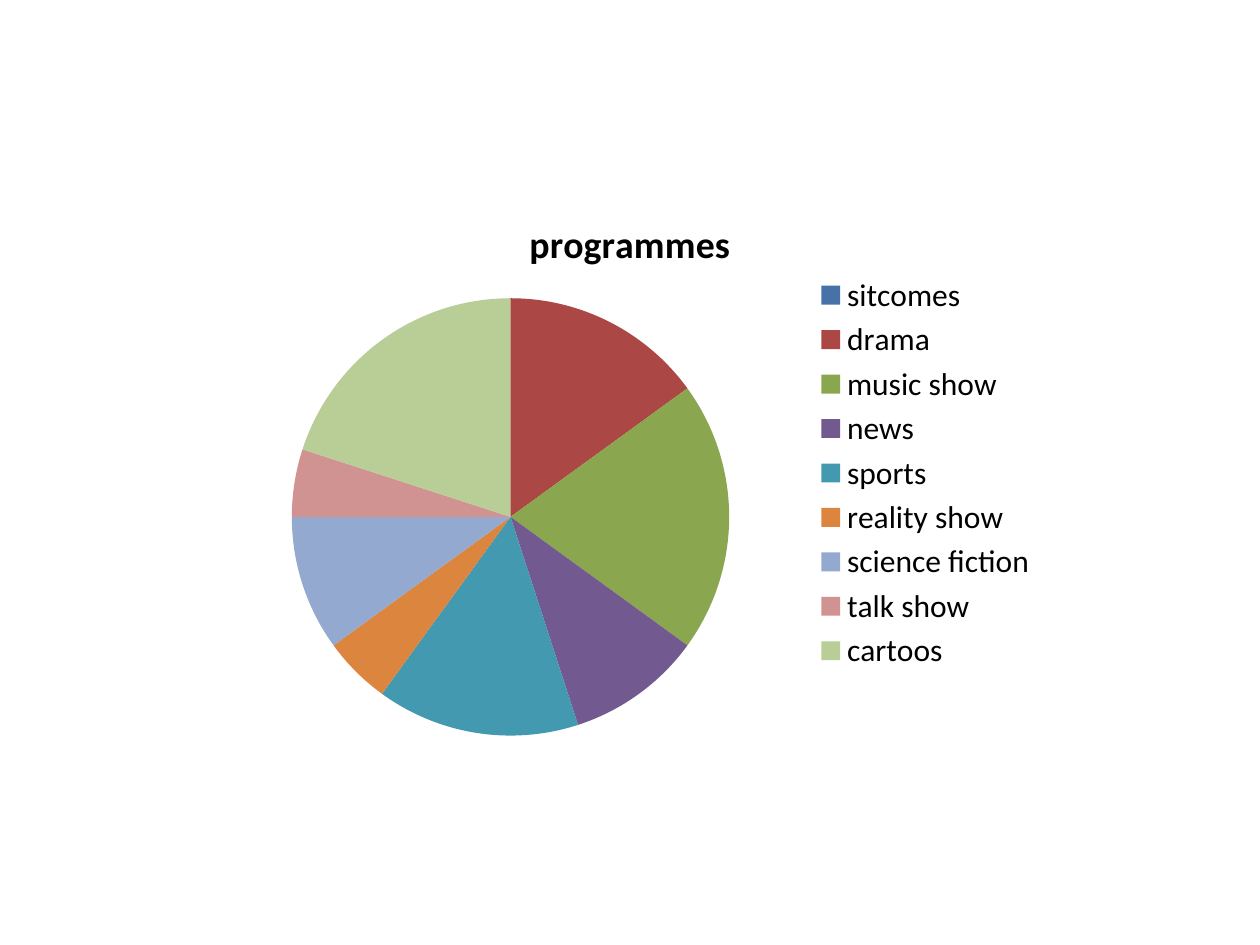
from dataclasses import dataclass

from pptx import Presentation
from pptx.chart.data import CategoryChartData
from pptx.dml.color import RGBColor
from pptx.enum.chart import XL_CHART_TYPE as ChartType, XL_LEGEND_POSITION as LegendPosition
from pptx.util import Cm, Pt

TITLE = "programmes"
PROGRAMMES = [  # category, share, slice colour
    ("sitcomes", 0, "4672A8"),
    ("drama", 15, "AB4744"),
    ("music show", 20, "8AA64F"),
    ("news", 10, "725990"),
    ("sports", 15, "4299B0"),
    ("reality show", 5, "DC853E"),
    ("science fiction", 10, "93A9CF"),
    ("talk show", 5, "D19392"),
    ("cartoos", 20, "B9CD96"),
]


@dataclass(frozen=True)
class Theme:
    font: str = "Calibri"
    text: str = "000000"
    title_size: float = 21.6
    legend_size: float = 18


THEME = Theme()


def style_font(font, size, bold=False):
    font.name = THEME.font
    font.size = Pt(size)
    font.bold = bold
    font.color.rgb = RGBColor.from_string(THEME.text)


def add_programme_chart(slide, left, top, width, height):
    names, shares, colours = zip(*PROGRAMMES)
    data = CategoryChartData()
    data.categories = names
    data.add_series(TITLE, shares)
    chart = slide.shapes.add_chart(ChartType.PIE, left, top, width, height, data).chart
    style_font(chart.font, THEME.legend_size)

    chart.has_title = True
    title_frame = chart.chart_title.text_frame
    title_frame.text = TITLE
    style_font(title_frame.paragraphs[0].runs[0].font, THEME.title_size, bold=True)
    chart.chart_title.include_in_layout = False

    chart.has_legend = True
    chart.legend.position = LegendPosition.RIGHT
    chart.legend.include_in_layout = False
    style_font(chart.legend.font, THEME.legend_size)

    plot = chart.plots[0]
    plot.vary_by_categories = True
    for index, colour in enumerate(colours):
        point_format = plot.series[0].points[index].format
        point_format.fill.solid()
        point_format.fill.fore_color.rgb = RGBColor.from_string(colour)
        point_format.line.fill.background()


def main():
    presentation = Presentation()
    presentation.slide_width, presentation.slide_height = Cm(25.4), Cm(19.05)
    slide = presentation.slides.add_slide(presentation.slide_layouts[6])
    width, height = Cm(16.93), Cm(11.29)
    left = (presentation.slide_width - width) // 2
    add_programme_chart(slide, left, Cm(3.89), width, height)
    presentation.save("out.pptx")


if __name__ == "__main__":
    main()
